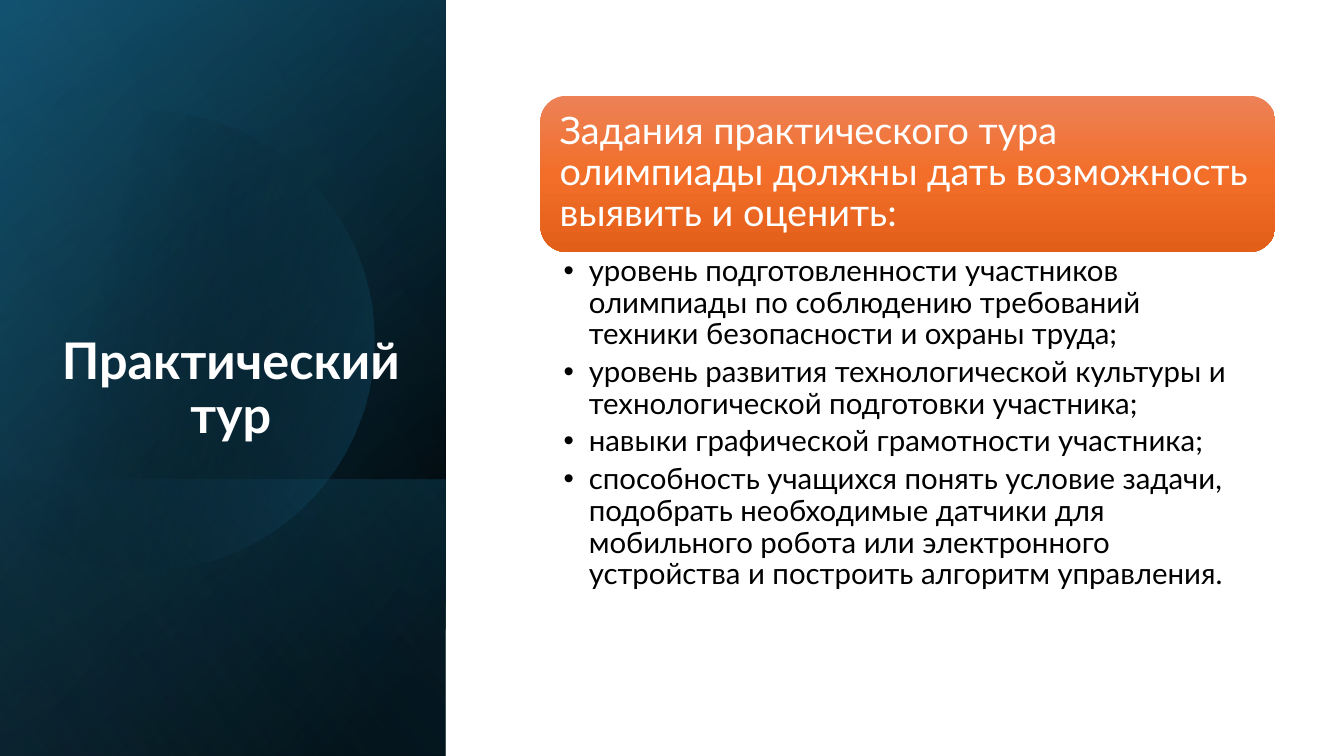
"""Build the slide about the practical round of the olympiad."""
from math import acos, cos, pi, sin

from lxml import etree
from pptx import Presentation
from pptx.dml.color import RGBColor as RGB
from pptx.enum.shapes import MSO_SHAPE as SHAPE
from pptx.enum.text import MSO_ANCHOR as ANCHOR, PP_ALIGN as ALIGN
from pptx.oxml.ns import qn
from pptx.util import Inches, Pt

TITLE = "Практический тур"
HEADING = "Задания практического тура олимпиады должны дать возможность выявить и оценить:"
BULLETS = [
    "уровень подготовленности участников олимпиады по соблюдению требований техники безопасности и охраны труда;",
    "уровень развития технологической культуры и технологической подготовки участника;",
    "навыки графической грамотности участника;",
    "способность учащихся понять условие задачи, подобрать необходимые датчики для мобильного робота "
    "или электронного устройства и построить алгоритм управления.",
]

THEME = {
    "font": "Lato",
    "title": {"size": Pt(36), "bold": True, "color": "FFFFFF"},
    "heading": {"size": Pt(27), "bold": False, "color": "FFFFFF"},
    "bullet": {"size": Pt(21), "bold": False, "color": "000000"},
    "base": ([(8, "000000", 100), (100, "104862", 100)], 50),
    "tint": ([(0, "000000", 0), (99, "156082", 46)], 30),
    "foot": ([(2, "156082", 29), (100, "000000", 30)], 130),
    "disc": ([(29, "000000", 0), (100, "156082", 43)], 14),
    "glow": ([(0, "46B1E1", 0), (99, "46B1E1", 11)], 120),
    "banner": ([(0, "ED8257", 100), (50, "F26E29", 100), (100, "E25F1A", 100)], 90),
}
THEME["glow"][0][0] = (0, "000000", 0)

SLIDE_W, SLIDE_H = 13.33, 7.5
PANEL_W, FOOT_H = 4.42, 2.74
DISC_X, DISC_Y, DISC_R = 1.43, 3.38, 2.28
DISC_STEPS = 120
BODY_X, BODY_W = 5.36, 7.29


def paint(sp, name):
    """Fill a shape with a named gradient and drop its outline."""
    stops, angle = THEME[name]
    sp.shadow.inherit = False
    sp.line.fill.background()
    sp.fill.gradient()
    grad = sp._element.spPr.find(qn("a:gradFill"))
    gs_list = grad.find(qn("a:gsLst"))
    for gs in list(gs_list):
        gs_list.remove(gs)
    for pos, color, alpha in stops:
        gs = etree.SubElement(gs_list, qn("a:gs"), pos=str(pos * 1000))
        clr = etree.SubElement(gs, qn("a:srgbClr"), val=color)
        if alpha < 100:
            etree.SubElement(clr, qn("a:alpha"), val=str(alpha * 1000))
    grad.find(qn("a:lin")).set("ang", str(angle * 60000))


def add_panel(slide, name, height):
    """Add a quarter-turned, mirrored panel standing on the slide's bottom edge."""
    left = (PANEL_W - height) / 2
    top = SLIDE_H - (height + PANEL_W) / 2
    sp = slide.shapes.add_shape(SHAPE.RECTANGLE, *map(Inches, (left, top, height, PANEL_W)))
    sp.rotation = 90
    sp._element.spPr.find(qn("a:xfrm")).set("flipH", "1")
    paint(sp, name)


def add_disc(slide):
    """Add the circle cut off by the slide's left edge."""
    reach = acos(-DISC_X / DISC_R)
    angles = [-reach + 2 * reach * i / DISC_STEPS for i in range(DISC_STEPS + 1)]
    points = [(Inches(DISC_X + DISC_R * cos(a)), Inches(DISC_Y + DISC_R * sin(a))) for a in angles]
    builder = slide.shapes.build_freeform(*points[0])
    builder.add_line_segments(points[1:], close=True)
    paint(builder.convert_to_shape(), "disc")


def add_text(slide, box, texts, style, insets, anchor, align=ALIGN.LEFT, bullet=False):
    """Add a wrapped text box with one paragraph per text."""
    tf = slide.shapes.add_textbox(*map(Inches, box)).text_frame
    tf.word_wrap = True
    tf.vertical_anchor = anchor
    for side, inset in zip(("left", "top", "right", "bottom"), insets):
        setattr(tf, f"margin_{side}", Inches(inset))
    fmt = THEME[style]
    for i, text in enumerate(texts):
        p = tf.add_paragraph() if i else tf.paragraphs[0]
        p.alignment, p.line_spacing = align, 0.9
        r = p.add_run()
        r.text = text
        r.font.name = THEME["font"]
        r.font.color.rgb = RGB.from_string(fmt["color"])
        for key in ("size", "bold"):
            setattr(r.font, key, fmt[key])
        if bullet:
            p.space_after = Pt(4.2)
            pPr = p._p.get_or_add_pPr()
            pPr.set("marL", str(Inches(0.25)))
            pPr.set("indent", str(-Inches(0.25)))
            etree.SubElement(pPr, qn("a:buFont"), typeface="Arial")
            etree.SubElement(pPr, qn("a:buChar"), char="•")


def main():
    """Compose and save the slide."""
    prs = Presentation()
    prs.slide_width, prs.slide_height = Inches(SLIDE_W), Inches(SLIDE_H)
    slide = prs.slides.add_slide(prs.slide_layouts[6])

    for name, height in (("base", SLIDE_H), ("tint", SLIDE_H), ("foot", FOOT_H)):
        add_panel(slide, name, height)
    add_disc(slide)
    add_panel(slide, "glow", SLIDE_H)
    add_text(slide, (0.31, 1.84, 3.96, 2.62), [TITLE], "title",
             (0.1, 0.05, 0.1, 0.05), ANCHOR.BOTTOM, ALIGN.CENTER)

    banner = slide.shapes.add_shape(SHAPE.ROUNDED_RECTANGLE, *map(Inches, (BODY_X, 0.95, BODY_W, 1.55)))
    paint(banner, "banner")
    add_text(slide, (5.44, 1.02, 7.14, 1.4), [HEADING], "heading", (0.11,) * 4, ANCHOR.MIDDLE)
    add_text(slide, (BODY_X, 2.5, BODY_W, 4.16), BULLETS, "bullet",
             (0.23, 0.04, 0.21, 0.04), ANCHOR.TOP, bullet=True)
    prs.save("out.pptx")


if __name__ == "__main__":
    main()
